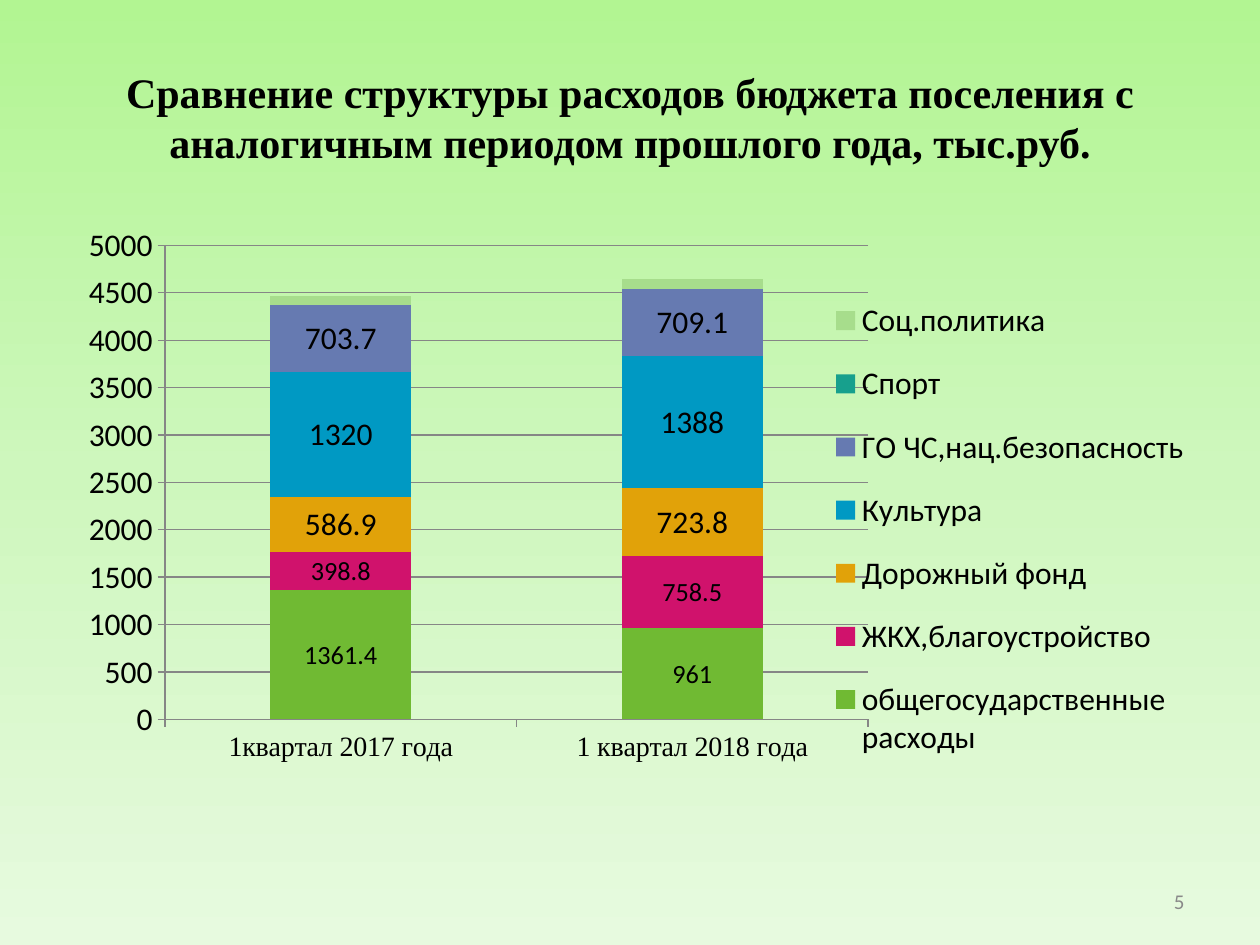
import copy
import pptx
import pptx.chart.data
import pptx.dml.color
import pptx.enum.chart
import pptx.enum.text
import pptx.oxml
import pptx.oxml.ns
import pptx.util

RGBColor = pptx.dml.color.RGBColor
Inches = pptx.util.Inches

BLACK = RGBColor(0x00, 0x00, 0x00)
GRAY = RGBColor(0x89, 0x89, 0x89)
AXIS = RGBColor(0x86, 0x86, 0x86)
GREEN = RGBColor(0x70, 0xBA, 0x33)
PINK = RGBColor(0xD0, 0x12, 0x6C)
ORANGE = RGBColor(0xE1, 0xA2, 0x09)
BLUE = RGBColor(0x00, 0x99, 0xC3)
VIOLET = RGBColor(0x66, 0x7A, 0xB1)
TEAL = RGBColor(0x17, 0xA0, 0x8D)
PALE_GREEN = RGBColor(0xA7, 0xDD, 0x8C)
BACKGROUND = [
    (0, RGBColor(0xB2, 0xF5, 0x92)),
    (0.5, RGBColor(0xCE, 0xF7, 0xBD)),
    (1, RGBColor(0xE7, 0xFA, 0xDF)),
]

SERIF, SANS = "Times New Roman", "Calibri"
TITLE = "Сравнение структуры расходов бюджета поселения с аналогичным периодом прошлого года, тыс.руб."
SLIDE_NUMBER = "5"
QUARTERS = ["1квартал 2017 года", "1 квартал 2018 года"]
EXPENSES = [
    ("общегосударственные расходы", (1361.4, 961), GREEN, 15),
    ("ЖКХ,благоустройство", (398.8, 758.5), PINK, 15),
    ("Дорожный фонд", (586.9, 723.8), ORANGE, 18),
    ("Культура", (1320, 1388), BLUE, 18),
    ("ГО ЧС,нац.безопасность", (703.7, 709.1), VIOLET, 18),
    ("Спорт", (0, 0), TEAL, None),
    ("Соц.политика", (100, 100), PALE_GREEN, None),
]

WIDTH, HEIGHT = 10, 7.5
MARGIN = WIDTH / 20
CONTENT_WIDTH = WIDTH - 2 * MARGIN
PLOT_AREA = (0.09, 0.04, 0.62, 0.76)
LEGEND_AREA = (0.67, 0.09, 0.33, 0.81)


def format_font(font, size, name=SANS, color=BLACK, bold=False):
    font.size = pptx.util.Pt(size)
    font.name = name
    font.color.rgb = color
    font.bold = bold


def write_text(shape, text, align, **font_format):
    frame = shape.text_frame
    frame.word_wrap = True
    frame.vertical_anchor = pptx.enum.text.MSO_ANCHOR.MIDDLE
    paragraph = frame.paragraphs[0]
    paragraph.alignment = align
    run = paragraph.add_run()
    run.text = text
    format_font(run.font, **font_format)


def place(shape, left, top, width, height):
    shape.left, shape.top = Inches(left), Inches(top)
    shape.width, shape.height = Inches(width), Inches(height)


def manual_layout(area, inner=False):
    target = '<c:layoutTarget val="inner"/>' if inner else ""
    modes = "".join(f'<c:{axis}Mode val="edge"/>' for axis in "xy")
    sizes = "".join(f'<c:{key} val="{share}"/>' for key, share in zip("xywh", area))
    return pptx.oxml.parse_xml(
        f'<c:layout {pptx.oxml.ns.nsdecls("c")}><c:manualLayout>'
        f"{target}{modes}{sizes}</c:manualLayout></c:layout>"
    )


def paint_background(slide):
    fill = slide.background.fill
    fill.gradient()
    fill.gradient_angle = 270
    last_stop = slide.element.xpath(".//a:gs")[-1]
    last_stop.addnext(copy.deepcopy(last_stop))
    for stop, (position, color) in zip(fill.gradient_stops, BACKGROUND):
        stop.position = position
        stop.color.rgb = color


def add_expense_chart(slide):
    data = pptx.chart.data.CategoryChartData()
    data.categories = QUARTERS
    for name, values, _, _ in EXPENSES:
        data.add_series(name, values)
    area = [Inches(length) for length in (MARGIN, 1.75, CONTENT_WIDTH, 4.95)]
    chart = slide.shapes.add_chart(
        pptx.enum.chart.XL_CHART_TYPE.COLUMN_STACKED, *area, data
    ).chart
    chart.has_title = False
    format_font(chart.font, 18)

    plot = chart.plots[0]
    plot.vary_by_categories = False
    plot.overlap, plot.gap_width = 100, 150
    for series, (_, _, color, label_size) in zip(plot.series, EXPENSES):
        series.format.fill.solid()
        series.format.fill.fore_color.rgb = color
        if label_size:
            labels = series.data_labels
            labels.show_value = True
            format_font(labels.font, label_size)

    value_axis, category_axis = chart.value_axis, chart.category_axis
    value_axis.minimum_scale, value_axis.maximum_scale = 0, 5000
    value_axis.major_unit = 500
    value_axis.has_major_gridlines = True
    format_font(value_axis.tick_labels.font, 18)
    format_font(category_axis.tick_labels.font, 16, name=SERIF)
    for axis in (value_axis, category_axis):
        axis.major_tick_mark = pptx.enum.chart.XL_TICK_MARK.OUTSIDE
    for line in (value_axis.format.line, category_axis.format.line,
                 value_axis.major_gridlines.format.line):
        line.color.rgb = AXIS
        line.width = pptx.util.Pt(0.75)

    chart.has_legend = True
    chart.legend.position = pptx.enum.chart.XL_LEGEND_POSITION.RIGHT
    chart.legend.include_in_layout = False
    format_font(chart.legend.font, 18)
    for layout in chart.element.xpath(".//c:plotArea/c:layout | .//c:legend/c:layout"):
        layout.getparent().remove(layout)
    chart.element.xpath(".//c:plotArea")[0].insert(0, manual_layout(PLOT_AREA, inner=True))
    chart.element.xpath(".//c:legendPos")[0].addnext(manual_layout(LEGEND_AREA))


def main():
    presentation = pptx.Presentation()
    presentation.slide_width, presentation.slide_height = Inches(WIDTH), Inches(HEIGHT)
    slide = presentation.slides.add_slide(presentation.slide_layouts[5])
    paint_background(slide)

    title = slide.shapes.title
    place(title, MARGIN, 0.3, CONTENT_WIDTH, 1.25)
    write_text(title, TITLE, pptx.enum.text.PP_ALIGN.CENTER, size=24, name=SERIF, bold=True)

    add_expense_chart(slide)

    number_width = 2.33
    number = slide.shapes.add_textbox(0, 0, 0, 0)
    place(number, WIDTH - MARGIN - number_width, 6.95, number_width, 0.4)
    write_text(number, SLIDE_NUMBER, pptx.enum.text.PP_ALIGN.RIGHT, size=12, color=GRAY)

    presentation.save("out.pptx")


if __name__ == "__main__":
    main()
